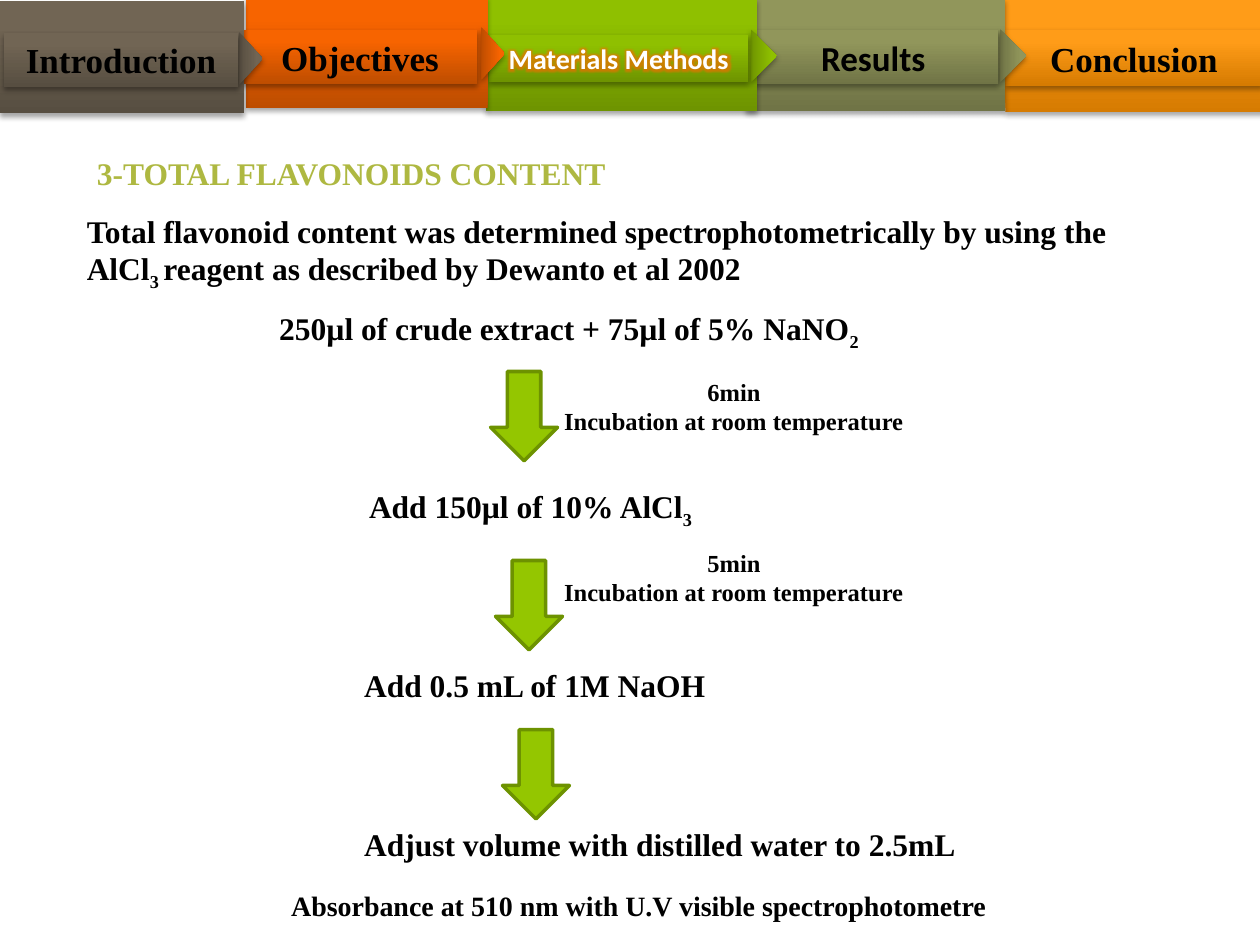
from copy import deepcopy
from typing import NamedTuple, Optional

from lxml import etree
from pptx import Presentation
from pptx import util as u
from pptx.dml import color
from pptx.enum import shapes, text
from pptx.oxml import ns

SERIF = "Times New Roman"
SANS = "Calibri"
BLACK = "000000"


class Box(NamedTuple):
    left: float
    top: float
    width: float
    height: float


class Tab(NamedTuple):
    label: str
    tones: tuple
    panel: Box
    band: Box
    tip: Optional[Box] = None
    font: str = SERIF
    size: int = 20
    ink: str = BLACK
    glow: Optional[str] = None


class Step(NamedTuple):
    words: str
    box: Box
    size: int = 18
    wrap: bool = False
    center: bool = False


TABS = [
    Tab("Conclusion", ("D67B01", "FF9C18", "FF9D19"),
        Box(20.27, 0, 5.21, 2.26), Box(20.27, 0.61, 5.18, 1.12)),
    Tab("Results", ("707446", "91965B", "93985A"),
        Box(15.04, -0.03, 5.23, 2.26), Box(15.09, 0.61, 5.03, 1.09),
        Box(19.89, 0.86, 1.07, 0.53), font=SANS),
    Tab("Materials Methods", ("6E9400", "8FC000", "90C100"),
        Box(9.8, -0.03, 5.46, 2.26), Box(9.86, 0.71, 5.23, 0.94),
        Box(14.86, 0.86, 1.07, 0.53), SANS, 16, "FFFFFF", "FF6700"),
    Tab("Objectives", ("BE4D00", "F76400", "F86400"),
        Box(4.95, -0.08, 4.88, 2.26), Box(4.9, 0.61, 4.72, 1.09),
        Box(9.4, 0.84, 1.07, 0.48)),
    Tab("Introduction", ("574E41", "716554", "726654"),
        Box(0, 0.03, 4.93, 2.26), Box(0.08, 0.66, 4.72, 1.09),
        Box(4.52, 0.94, 1.07, 0.48)),
]

WAIT = "Incubation at room temperature"
STEPS = [
    Step("Total flavonoid content was determined spectrophotometrically by "
         "using the AlCl_3 _reagent as described by Dewanto et al 2002",
         Box(1.5, 4.14, 22.6, 1.8), wrap=True),
    Step("250µl of crude extract + 75µl of 5% NaNO_2", Box(5.38, 6.1, 12.34, 1.02)),
    Step("Add 150µl of 10% AlCl_3", Box(7.19, 9.7, 7.11, 1.02)),
    Step(f"6min\n{WAIT}", Box(11.1, 7.47, 7.39, 1.45), 14, center=True),
    Step(f"5min\n{WAIT}", Box(11.1, 10.92, 7.39, 1.45), 14, center=True),
    Step("Add 0.5 mL of 1M NaOH", Box(7.09, 13.31, 7.62, 1.02)),
    Step("Adjust volume with distilled water to 2.5mL", Box(7.09, 16.51, 12.55, 1.02)),
    Step("Absorbance at 510 nm with U.V visible spectrophotometre",
         Box(5.62, 17.78, 14.68, 0.94), 16),
]

ARROWS = [Box(left, top, 1.35, 1.8)
          for left, top in ((9.89, 7.49), (9.99, 11.3), (10.13, 14.71))]


def tint(code: str) -> color.RGBColor:
    return color.RGBColor.from_string(code)


def place(box: Box) -> list:
    return [u.Cm(side) for side in box]


def effect(parent, kind: str, code: str, alpha: int, **attrs) -> None:
    node = etree.SubElement(parent, ns.qn(f"a:{kind}"),
                            {key: str(value) for key, value in attrs.items()})
    hue = etree.SubElement(node, ns.qn("a:srgbClr"), val=code)
    etree.SubElement(hue, ns.qn("a:alpha"), val=str(alpha * 1000))


def write(shape, words: str, *, font: str = SERIF, size: int = 18,
          ink: str = BLACK, center: bool = False, wrap: bool = True,
          glow: Optional[str] = None) -> None:
    frame = shape.text_frame
    frame.word_wrap = wrap
    frame.auto_size = text.MSO_AUTO_SIZE.SHAPE_TO_FIT_TEXT
    for row, line in enumerate(words.split("\n")):
        para = frame.add_paragraph() if row else frame.paragraphs[0]
        para.alignment = text.PP_ALIGN.CENTER if center else text.PP_ALIGN.LEFT
        for spot, part in enumerate(line.split("_")):
            run = para.add_run()
            run.text = part
            run.font.name = font
            run.font.size = u.Pt(size)
            run.font.bold = True
            run.font.color.rgb = tint(ink)
            props = run.font._element
            if spot % 2:
                props.set("baseline", "-25000")
            if glow:
                group = etree.Element(ns.qn("a:effectLst"))
                effect(group, "glow", glow, 60, rad=u.Pt(8))
                props.find(ns.qn("a:solidFill")).addnext(group)


def shade(shape, tones: tuple) -> None:
    shape.fill.gradient()
    shape.fill.gradient_angle = 90
    props = shape._element.spPr
    stops = props.find(f".//{ns.qn('a:gsLst')}")
    stops.append(deepcopy(stops[-1]))
    for stop, tone, spot in zip(shape.fill.gradient_stops, tones, (0, 0.8, 1)):
        stop.color.rgb = tint(tone)
        stop.position = spot
    shape.line.fill.background()
    shape.shadow.inherit = False
    effect(props.find(ns.qn("a:effectLst")), "outerShdw", BLACK, 35,
           blurRad=u.Pt(3.1), dist=u.Pt(1.8), dir=5400000, rotWithShape=0)


def draw_tab(slide, tab: Tab) -> None:
    kinds = shapes.MSO_SHAPE
    home = slide.shapes.add_group_shape().shapes if tab.tip else slide.shapes
    shade(home.add_shape(kinds.RECTANGLE, *place(tab.panel)), tab.tones)
    if tab.tip:
        tip = home.add_shape(kinds.ISOSCELES_TRIANGLE, *place(tab.tip))
        tip.rotation = 90
        shade(tip, tab.tones)
    band = slide.shapes.add_shape(kinds.RECTANGLE, *place(tab.band))
    shade(band, tab.tones)
    write(band, tab.label, font=tab.font, size=tab.size, ink=tab.ink,
          center=True, glow=tab.glow)


def draw_step(slide, step: Step) -> None:
    box = slide.shapes.add_textbox(*place(step.box))
    write(box, step.words, size=step.size, center=step.center, wrap=step.wrap)


def draw_arrow(slide, box: Box) -> None:
    arrow = slide.shapes.add_shape(shapes.MSO_SHAPE.DOWN_ARROW, *place(box))
    arrow.fill.solid()
    arrow.fill.fore_color.rgb = tint("94C600")
    arrow.line.color.rgb = tint("6D9200")
    arrow.line.width = u.Pt(2)
    arrow.shadow.inherit = False


def main() -> None:
    deck = Presentation()
    deck.slide_width, deck.slide_height = u.Cm(25.4), u.Cm(19.05)
    slide = deck.slides.add_slide(deck.slide_layouts[5])
    title = slide.shapes.title
    title.left, title.top, title.width, title.height = place(Box(1.7, 2.97, 11.99, 1.02))
    title.text_frame.vertical_anchor = text.MSO_ANCHOR.TOP
    write(title, "3-TOTAL FLAVONOIDS CONTENT", ink="AEB841")
    for step in STEPS:
        draw_step(slide, step)
    for box in ARROWS:
        draw_arrow(slide, box)
    for tab in TABS:
        draw_tab(slide, tab)
    deck.save("out.pptx")


if __name__ == "__main__":
    main()
